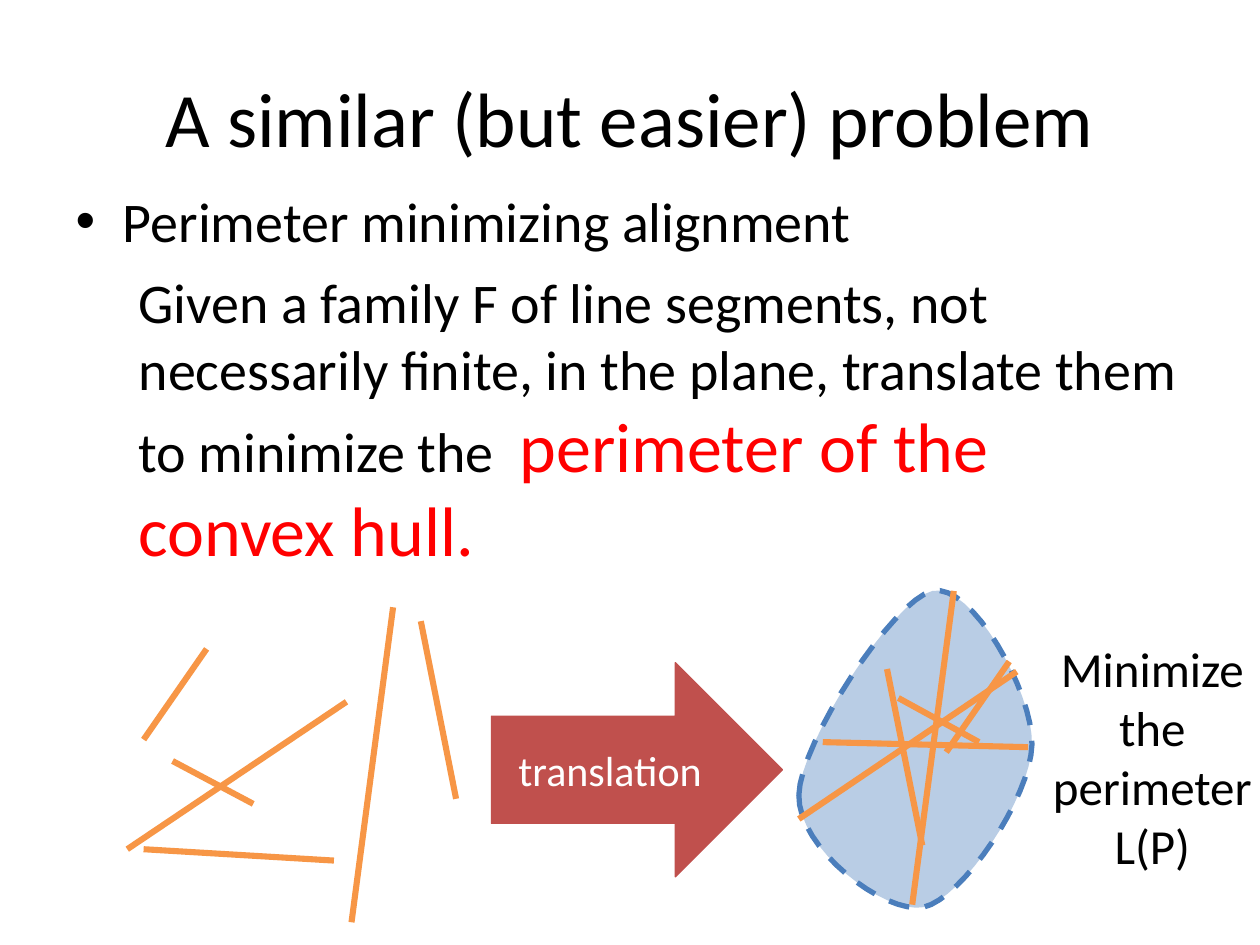
from lxml import etree
from pptx import Presentation, util as u
from pptx.dml.color import RGBColor
from pptx.enum import dml, shapes, text
from pptx.oxml import ns

INK = {"text": "000000", "key": "FF0000", "bar": "F79646", "hull": "B9CDE5",
       "rim": "4B7EBC", "arrow": "C0504D", "white": "FFFFFF"}
COLS, ROWS = 100, 75
FONT = "Calibri"


class Deck:
    def __init__(self):
        self.prs = Presentation()
        self.prs.slide_width, self.prs.slide_height = u.Inches(10), u.Inches(7.5)
        self.slide = self.prs.slides.add_slide(self.prs.slide_layouts[1])
        self.items = self.slide.shapes

    def spot(self, col, row):
        return (round(self.prs.slide_width * col / COLS),
                round(self.prs.slide_height * row / ROWS))

    def box(self, col, row, wide, high):
        return *self.spot(col, row), *self.spot(wide, high)

    def tint(self, fmt, ink):
        fmt.solid()
        fmt.fore_color.rgb = RGBColor.from_string(INK[ink])

    def style(self, font, size, ink="text"):
        font.name, font.size = FONT, u.Pt(size)
        font.color.rgb = RGBColor.from_string(INK[ink])

    def stroke(self, line, ink, width):
        self.tint(line.fill, ink)
        line.width = u.Pt(width)

    def place(self, item, *area):
        item.left, item.top, item.width, item.height = self.box(*area)
        item.text_frame.auto_size = text.MSO_AUTO_SIZE.NONE
        return item.text_frame

    def words(self, frame, lines, size, ink="text", align=text.PP_ALIGN.CENTER):
        frame.word_wrap = True
        frame.text = "\n".join(lines)
        for para in frame.paragraphs:
            para.alignment = align
            self.style(para.font, size, ink)

    def title(self, line, *area):
        frame = self.place(self.items.title, *area)
        frame.vertical_anchor = text.MSO_ANCHOR.MIDDLE
        self.words(frame, [line], 44)

    def body(self, head, detail, key, *area):
        frame = self.place(self.slide.placeholders[1], *area)
        self.words(frame, [head, detail], 32, align=text.PP_ALIGN.LEFT)
        para = frame.paragraphs[1]
        para.level = 1
        props = para._p.get_or_add_pPr()
        props.set("marL", str(u.Inches(0.5)))
        props.set("indent", "0")
        # The bullet choice comes before the default run style
        none = etree.Element(ns.qn("a:buNone"))
        props.find(ns.qn("a:defRPr")).addprevious(none)
        run = para.add_run()
        run.text = key
        self.style(run.font, 40, "key")

    def label(self, lines, size, *area):
        self.words(self.items.add_textbox(*self.box(*area)).text_frame, lines, size)

    def arrow(self, line, size, *area):
        item = self.items.add_shape(shapes.MSO_SHAPE.RIGHT_ARROW, *self.box(*area))
        item.shadow.inherit = False
        self.tint(item.fill, "arrow")
        self.stroke(item.line, "arrow", 0.75)
        item.text_frame.vertical_anchor = text.MSO_ANCHOR.MIDDLE
        self.words(item.text_frame, [line], size, "white")

    def bar(self, start, end):
        item = self.items.add_connector(shapes.MSO_CONNECTOR.STRAIGHT,
                                        *self.spot(*start), *self.spot(*end))
        self.stroke(item.line, "bar", 3.5)
        etree.SubElement(item._element.spPr, ns.qn("a:effectLst"))

    def hull(self, start, curves, steps=16):
        dots, last = [], start
        for curve in curves:
            ends = (last, *curve)
            for i in range(1, steps + 1):
                t = i / steps
                mix = ((1 - t) ** 3, 3 * t * (1 - t) ** 2, 3 * t * t * (1 - t), t ** 3)
                dots.append(self.spot(*(sum(m * p[axis] for m, p in zip(mix, ends))
                                        for axis in (0, 1))))
            last = curve[-1]
        pen = self.items.build_freeform(*self.spot(*start))
        pen.add_line_segments(dots[:-1], close=True)
        item = pen.convert_to_shape()
        item.shadow.inherit = False
        self.tint(item.fill, "hull")
        self.stroke(item.line, "rim", 3)
        item.line.dash_style = dml.MSO_LINE.DASH
        # Behind the title and body
        self.items._spTree.insert(2, item._element)


def main():
    deck = Deck()

    # Title and problem statement
    deck.title("A similar (but easier) problem", 5, 3, 90, 12.5)
    deck.body("Perimeter minimizing alignment",
              "Given a family F of line segments, not necessarily finite, "
              "in the plane, translate them to minimize the  ",
              "perimeter of the convex hull.", 5, 14.3, 90, 49.5)

    # Convex hull
    deck.hull((63.4, 63.1), [
        ((63.5, 58.9), (70.9, 47.6), (74, 46.9)),
        ((77.1, 46.2), (82, 54.9), (81.9, 59.1)),
        ((81.8, 63.3), (76.4, 71.3), (73.3, 72)),
        ((70.2, 72.6), (63.3, 67.3), (63.4, 63.1))])

    # Segments as given, then as aligned
    given = [((26.5, 68.3), (11.4, 67.4)), ((31.2, 48.2), (27.9, 73.2)),
             ((27.5, 55.7), (10.1, 67.4)), ((33.4, 49.3), (36.2, 63.4)),
             ((20.1, 63.8), (13.7, 60.4)), ((16.4, 51.5), (11.4, 58.7))]
    aligned = [((81.6, 59.3), (65.3, 58.9)), ((75.7, 46.9), (72.4, 71.8)),
               ((80.7, 53.3), (63.4, 65)), ((70.4, 53.1), (73.2, 67.1)),
               ((77.7, 58.9), (71.3, 55.4)), ((80.1, 52.5), (75.1, 59.7))]
    for ends in given + aligned:
        deck.bar(*ends)

    # Arrow and goal
    deck.arrow("translation", 24, 39, 52.6, 23.1, 17)
    deck.label(["Minimize the perimeter", "L(P)"], 28, 82.4, 50.2, 18.1, 19.9)

    deck.prs.save("out.pptx")


if __name__ == "__main__":
    main()
